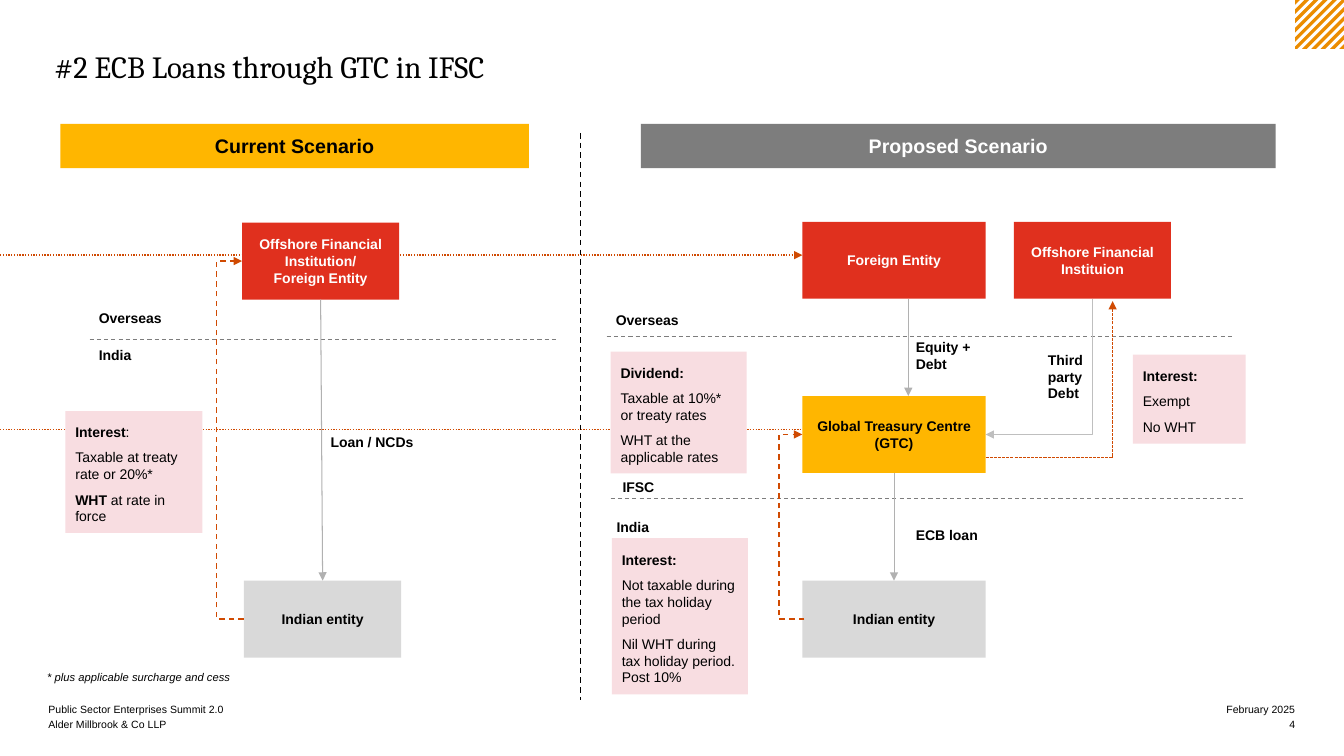
"""Build the slide comparing current and proposed ECB loan structures."""
from dataclasses import dataclass

from lxml import etree
from pptx import Presentation
from pptx.dml.color import RGBColor
from pptx.enum.dml import MSO_LINE
from pptx.enum.shapes import MSO_CONNECTOR, MSO_SHAPE
from pptx.enum.text import MSO_ANCHOR, PP_ALIGN
from pptx.oxml.ns import qn
from pptx.util import Cm, Pt

RECTANGLE = MSO_SHAPE.RECTANGLE
STRAIGHT, ELBOW = MSO_CONNECTOR.STRAIGHT, MSO_CONNECTOR.ELBOW
DASH, DOT, SHORT_DASH = MSO_LINE.DASH, MSO_LINE.ROUND_DOT, MSO_LINE.SQUARE_DOT
LEFT, CENTER, RIGHT = PP_ALIGN.LEFT, PP_ALIGN.CENTER, PP_ALIGN.RIGHT
TOP, MIDDLE, BOTTOM = MSO_ANCHOR.TOP, MSO_ANCHOR.MIDDLE, MSO_ANCHOR.BOTTOM

BLACK = RGBColor(0x00, 0x00, 0x00)
WHITE = RGBColor(0xFF, 0xFF, 0xFF)
YELLOW = RGBColor(0xFF, 0xB6, 0x00)
RED = RGBColor(0xE0, 0x30, 0x1E)
PINK = RGBColor(0xF8, 0xDD, 0xE1)
DARK_GREY = RGBColor(0x7D, 0x7D, 0x7D)
MID_GREY = RGBColor(0xB1, 0xB1, 0xB1)
SILVER = RGBColor(0xBF, 0xBF, 0xBF)
PALE_GREY = RGBColor(0xD9, 0xD9, 0xD9)
RUST = RGBColor(0xD0, 0x4A, 0x02)
ORANGE = RGBColor(0xEB, 0x8C, 0x00)

SLIDE_WIDTH, SLIDE_HEIGHT = 33.87, 19.05
BOX_HEIGHT = 1.94
STRIPED_SIDE, STRIPE_COUNT = 1.23, 11


@dataclass(frozen=True)
class Panel:
    """Text area; each line holds a bold part and a plain part."""
    left: float
    top: float
    width: float
    height: float
    lines: tuple[tuple[str, str], ...]
    fill: RGBColor | None = None
    color: RGBColor = BLACK
    size: float = 10
    align: PP_ALIGN = LEFT
    anchor: MSO_ANCHOR = MIDDLE
    margins: tuple[float, float, float] = (0.25, 0.25, 0.25)
    gap: float = 0
    italic: bool = False


@dataclass(frozen=True)
class Flow:
    """Line between two points, optionally bent and with an arrowhead."""
    start: tuple[float, float]
    end: tuple[float, float]
    color: RGBColor
    width: float = 0.75
    dash: MSO_LINE | None = None
    arrow: str = ""
    preset: str = ""
    bend_x: float | None = None


def bold(*texts: str) -> tuple[tuple[str, str], ...]:
    """Return fully bold lines."""
    return tuple((text, "") for text in texts)


def entity(left: float, top: float, width: float, fill: RGBColor, color: RGBColor, *texts: str) -> Panel:
    """Describe an entity box."""
    return Panel(left, top, width, BOX_HEIGHT, bold(*texts), fill, color,
                 align=CENTER, margins=(0.25, 0.13, 0.13))


def tax_note(left: float, top: float, width: float, height: float, *lines: tuple[str, str]) -> Panel:
    """Describe a pink tax note."""
    return Panel(left, top, width, height, lines, PINK, margins=(0.25, 0.36, 0.25), gap=3)


def footer(left: float, top: float, width: float, text: str, align: PP_ALIGN) -> Panel:
    """Describe one footer line."""
    return Panel(left, top, width, 0.38, (("", text),), size=7.5, align=align,
                 anchor=BOTTOM, margins=(0, 0, 0))


HEADERS = (
    Panel(1.52, 3.12, 11.81, 1.12, bold("Current Scenario"), YELLOW, size=14, align=CENTER),
    Panel(16.15, 3.12, 16, 1.12, bold("Proposed Scenario"), DARK_GREY, WHITE, 14, CENTER),
)
OFFSHORE = entity(6.1, 5.61, 3.96, RED, WHITE, "Offshore Financial Institution/", "Foreign Entity")
BORROWER = entity(6.15, 14.63, 3.96, PALE_GREY, BLACK, "Indian entity")
FOREIGN = entity(20.22, 5.59, 4.62, RED, WHITE, "Foreign Entity")
TREASURY = entity(20.22, 9.98, 4.62, YELLOW, BLACK, "Global Treasury Centre (GTC)")
GTC_BORROWER = entity(20.22, 14.63, 4.62, PALE_GREY, BLACK, "Indian entity")
LENDER = entity(25.55, 5.59, 3.96, RED, WHITE, "Offshore Financial Instituion")
ENTITIES = (OFFSHORE, BORROWER, FOREIGN, TREASURY, GTC_BORROWER, LENDER)
LABELS = (
    Panel(2.24, 7.52, 2.84, 0.97, bold("Overseas")),
    Panel(2.24, 8.48, 2.21, 0.94, bold("India")),
    Panel(8.08, 10.67, 3.56, 0.94, bold("Loan / NCDs")),
    Panel(15.27, 7.59, 2.18, 0.94, bold("Overseas")),
    Panel(15.44, 11.79, 2.69, 0.94, bold("IFSC")),
    Panel(15.29, 12.8, 2.21, 0.94, bold("India")),
    Panel(22.83, 8.28, 2.69, 1.37, bold("Equity + Debt")),
    Panel(22.83, 13, 2.69, 0.94, bold("ECB loan")),
    Panel(26.16, 8.59, 1.52, 1.8, bold("Third party", "Debt")),
)
TAX_NOTES = (
    tax_note(1.65, 10.36, 3.45, 3.07, ("Interest", ":"), ("", "Taxable at treaty rate or 20%*"),
             ("WHT ", "at rate in force")),
    tax_note(15.39, 8.86, 3.43, 3.07, ("Dividend:", ""), ("", "Taxable at 10%* or treaty rates"),
             ("", "WHT at the applicable rates")),
    tax_note(15.42, 13.56, 3.43, 3.94, ("Interest:", ""),
             ("", "Not taxable during the tax holiday period"),
             ("", "Nil WHT during tax holiday period. Post 10%")),
    tax_note(28.55, 8.94, 2.84, 2.24, ("Interest:", ""), ("", "Exempt"), ("", "No WHT")),
)
FOOTERS = (
    Panel(0.94, 16.76, 10.59, 0.61, (("", "* plus applicable surcharge and cess"),), size=8,
          anchor=TOP, margins=(0.25, 0.13, 0.13), italic=True),
    footer(1.22, 17.65, 15.21, "Public Sector Enterprises Summit 2.0", LEFT),
    footer(1.22, 18.03, 15.21, "Alder Millbrook & Co LLP", LEFT),
    footer(27.74, 17.65, 4.9, "February 2025", RIGHT),
    footer(27.74, 18.03, 4.9, "4", RIGHT),
)
BACK_FLOWS = (
    Flow((0, 6.43), (20.22, 6.43), RUST, 1, DOT, "tailEnd"),
    Flow((0, 10.83), (20.22, 10.83), RUST, 1, DOT),
    Flow((14.63, 3.35), (14.63, 17.65), BLACK, 1, DASH),
    Flow((2.26, 8.56), (14, 8.56), DARK_GREY, dash=DASH),
    Flow((15.29, 8.48), (31.09, 8.48), DARK_GREY, dash=DASH),
    Flow((15.39, 12.57), (31.37, 12.57), DARK_GREY, dash=DASH),
)
FLOWS = (
    Flow((22.89, 7.53), (22.89, 9.98), MID_GREY, arrow="tailEnd"),
    Flow((6.15, 15.6), (6.1, 6.58), RUST, 1, DASH, "tailEnd", "bentConnector3", 5.46),
    Flow((20.27, 15.6), (20.22, 10.95), RUST, 1, DASH, "tailEnd", "bentConnector3", 19.63),
    Flow((24.84, 10.95), (27.53, 7.53), SILVER, 1, None, "headEnd", "bentConnector2"),
    Flow((24.84, 11.53), (28.04, 7.59), RUST, 0.75, SHORT_DASH, "tailEnd", "bentConnector2"),
)
LOANS = ((OFFSHORE, BORROWER), (TREASURY, GTC_BORROWER))


def draw_panel(shapes, panel: Panel):
    """Draw a text area and return its shape."""
    bounds = [Cm(v) for v in (panel.left, panel.top, panel.width, panel.height)]
    if panel.fill is None:
        shape = shapes.add_textbox(*bounds)
    else:
        shape = shapes.add_shape(RECTANGLE, *bounds)
        shape.shadow.inherit = False
        shape.fill.solid()
        shape.fill.fore_color.rgb = panel.fill
        shape.line.fill.background()
    frame = shape.text_frame
    frame.word_wrap, frame.vertical_anchor = True, panel.anchor
    side, frame.margin_top, frame.margin_bottom = (Cm(v) for v in panel.margins)
    frame.margin_left = frame.margin_right = side
    frame.text = "\n".join(strong or plain for strong, plain in panel.lines)
    for index, (paragraph, (strong, plain)) in enumerate(zip(frame.paragraphs, panel.lines)):
        paragraph.alignment = panel.align
        paragraph.space_before = Pt(panel.gap if index else 0)
        paragraph.space_after = Pt(panel.gap)
        if strong and plain:
            paragraph.add_run().text = plain
        for position, run in enumerate(paragraph.runs):
            run.font.name, run.font.size = "Arial", Pt(panel.size)
            run.font.bold = bool(strong) and position == 0
            run.font.italic = panel.italic
            run.font.color.rgb = panel.color
    return shape


def draw_flow(shapes, flow: Flow):
    """Draw a line or elbow and return its connector."""
    connector = shapes.add_connector(ELBOW if flow.preset else STRAIGHT,
                                     *(Cm(v) for v in flow.start + flow.end))
    connector.line.color.rgb, connector.line.width = flow.color, Pt(flow.width)
    if flow.dash is not None:
        connector.line.dash_style = flow.dash
    properties = connector._element.spPr
    if flow.arrow:
        etree.SubElement(properties.find(qn("a:ln")), qn(f"a:{flow.arrow}"), type="triangle")
    if flow.preset:
        geometry = properties.find(qn("a:prstGeom"))
        geometry.set("prst", flow.preset)
        if flow.bend_x is not None:
            ratio = (flow.bend_x - flow.start[0]) / (flow.end[0] - flow.start[0])
            etree.SubElement(geometry.find(qn("a:avLst")), qn("a:gd"), name="adj1",
                             fmla=f"val {round(ratio * 100000)}")
    etree.SubElement(properties, qn("a:effectLst"))
    return connector


def draw_stripes(shapes) -> None:
    """Fill the top right corner square with diagonal stripes."""
    side, left = STRIPED_SIDE, SLIDE_WIDTH - STRIPED_SIDE
    band = 2 * side / (2 * STRIPE_COUNT - 1)
    for index in range(STRIPE_COUNT):
        near, far = 2 * index * band, (2 * index + 1) * band
        cuts = [near] + [side] * (near < side < far) + [min(far, 2 * side)]
        upper = [(min(cut, side), max(cut - side, 0)) for cut in cuts]
        outline = dict.fromkeys(upper + [(y, x) for x, y in reversed(upper)])
        corners = [(Cm(left + x), Cm(y)) for x, y in outline]
        builder = shapes.build_freeform(*corners[0])
        builder.add_line_segments(corners[1:], close=True)
        stripe = builder.convert_to_shape()
        stripe.shadow.inherit = False
        stripe.fill.solid()
        stripe.fill.fore_color.rgb = ORANGE
        stripe.line.fill.background()


def draw_title(title) -> None:
    """Place and format the slide title."""
    title.left, title.top, title.width, title.height = Cm(1.37), Cm(1.19), Cm(31.39), Cm(3.25)
    frame = title.text_frame
    frame.text = "#2 ECB Loans through GTC in IFSC"
    frame.vertical_anchor = TOP
    frame.margin_left = frame.margin_right = frame.margin_top = frame.margin_bottom = 0
    heading = frame.paragraphs[0]
    heading.alignment = LEFT
    font = heading.runs[0].font
    font.name, font.size, font.color.rgb = "Cambria", Pt(22), BLACK


def main() -> None:
    """Build and save the slide."""
    deck = Presentation()
    deck.slide_width, deck.slide_height = Cm(SLIDE_WIDTH), Cm(SLIDE_HEIGHT)
    slide = deck.slides.add_slide(deck.slide_layouts[5])
    shapes = slide.shapes
    draw_stripes(shapes)
    draw_title(shapes.title)
    for flow in BACK_FLOWS:
        draw_flow(shapes, flow)
    boxes = {box: draw_panel(shapes, box) for box in ENTITIES}
    for lender, borrower in LOANS:
        loan = draw_flow(shapes, Flow((0, 0), (1, 1), MID_GREY, arrow="tailEnd"))
        loan.begin_connect(boxes[lender], 2)
        loan.end_connect(boxes[borrower], 0)
    for flow in FLOWS:
        draw_flow(shapes, flow)
    for panel in HEADERS + LABELS + TAX_NOTES + FOOTERS:
        draw_panel(shapes, panel)
    deck.save("out.pptx")


if __name__ == "__main__":
    main()
